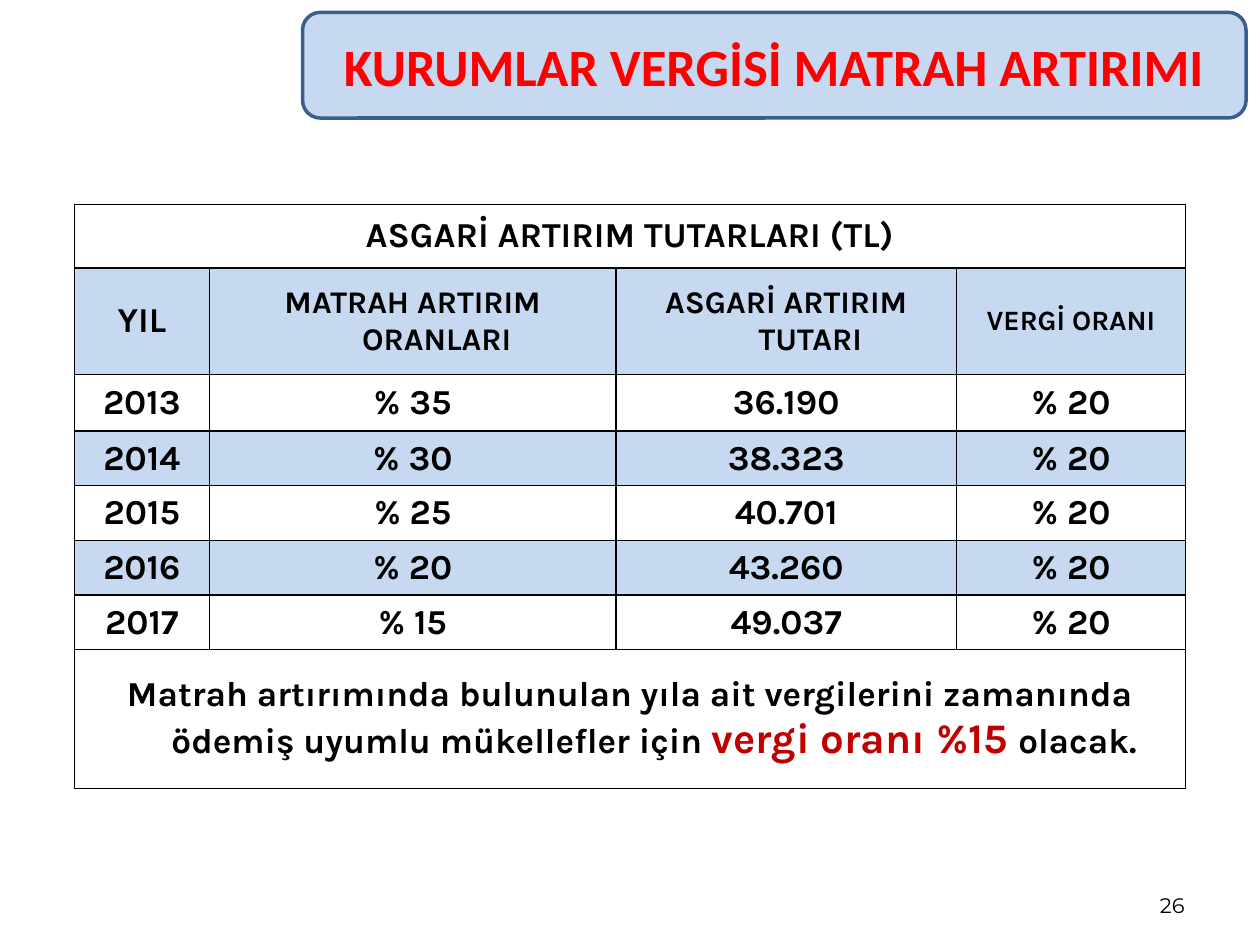
from lxml import etree
from pptx import Presentation
from pptx.dml.color import RGBColor
from pptx.enum.shapes import MSO_SHAPE
from pptx.enum.text import MSO_ANCHOR, PP_ALIGN
from pptx.oxml.ns import qn
from pptx.util import Cm, Pt

ROUND = MSO_SHAPE.ROUNDED_RECTANGLE
MID, LOW = MSO_ANCHOR.MIDDLE, MSO_ANCHOR.BOTTOM
MIDST, RIGHT = PP_ALIGN.CENTER, PP_ALIGN.RIGHT
HUES = {"blue": "C6D9F1", "edge": "3A5F8C", "red": "FF0000", "dark": "C00000", "black": "000000"}


def tint(name):
    """Return the named colour."""
    return RGBColor.from_string(HUES[name])


def write(para, text, font="Karla", size=20, hue="black", bold=True, align=MIDST):
    """Add a formatted run to a paragraph."""
    para.alignment = align
    run = para.add_run()
    run.text = text
    run.font.name = font
    run.font.size = Pt(size)
    run.font.bold = bold
    run.font.color.rgb = tint(hue)


class Deck:
    """Hold the style and the current slide."""

    def __init__(self):
        """Start a deck with one blank slide."""
        self.file = Presentation()
        self.file.slide_width, self.file.slide_height = Cm(25.4), Cm(19.05)
        self.slide = self.file.slides.add_slide(self.file.slide_layouts[6])
        self.hang = Cm(0.97)

    def panel(self, *spot):
        """Draw the rounded title panel."""
        shape = self.slide.shapes.add_shape(ROUND, *map(Cm, spot))
        shape.shadow.inherit = False
        shape.fill.solid()
        shape.fill.fore_color.rgb = tint("blue")
        shape.line.color.rgb = tint("edge")
        shape.line.width = Pt(2)

    def label(self, text, *spot, anchor=MID, **form):
        """Place a text box."""
        frame = self.slide.shapes.add_textbox(*map(Cm, spot)).text_frame
        frame.word_wrap = True
        frame.vertical_anchor = anchor
        write(frame.paragraphs[0], text, **form)

    def grid(self, left, top, cols, rows):
        """Add a plain bordered table."""
        spot = map(Cm, (left, top, sum(cols), sum(rows)))
        table = self.slide.shapes.add_table(len(rows), len(cols), *spot).table
        table.first_row = table.horz_banding = False
        for col, width in zip(table.columns, cols):
            col.width = Cm(width)
        for row, height in zip(table.rows, rows):
            row.height = Cm(height)
        for cell in table.iter_cells():
            self.border(cell)
            cell.fill.background()
        return table

    def border(self, cell):
        """Rule all four sides of a cell."""
        props = cell._tc.get_or_add_tcPr()
        for side in "LRTB":
            line = etree.SubElement(props, qn(f"a:ln{side}"), w=str(Pt(1)))
            fill = etree.SubElement(line, qn("a:solidFill"))
            etree.SubElement(fill, qn("a:srgbClr"), val=HUES["black"])

    def cell(self, cell, *runs, shade=False):
        """Fill a cell with text and form pairs."""
        if shade:
            cell.fill.solid()
            cell.fill.fore_color.rgb = tint("blue")
        cell.vertical_anchor = MID
        para = cell.text_frame.paragraphs[0]
        props = para._p.get_or_add_pPr()
        props.set("marL", str(self.hang))
        props.set("indent", str(-self.hang))
        for text, form in runs:
            write(para, text, **form)


def main():
    """Build the tax base slide."""
    deck = Deck()
    deck.panel(6.1, 0.25, 19.02, 2.13)
    deck.label("26", 18.21, 17.35, 5.92, 1.27, anchor=LOW,
               font="Montserrat", size=12, bold=False, align=RIGHT)
    deck.label("KURUMLAR VERGİSİ MATRAH ARTIRIMI", 6.5, 0.53, 18.21, 1.6,
               font="Calibri", size=30, hue="red")

    rows = [1.28, 2.15, 1.14] + [1.08] * 4 + [2.8]
    table = deck.grid(1.5, 4.12, [2.72, 8.2, 6.86, 4.62], rows)
    last = len(rows) - 1
    for row in (0, last):
        table.cell(row, 0).merge(table.cell(row, 3))
    deck.cell(table.cell(0, 0), ("ASGARİ ARTIRIM TUTARLARI (TL)", {}))

    heads = [("YIL", 20), ("MATRAH ARTIRIM ORANLARI", 18),
             ("ASGARİ ARTIRIM TUTARI", 18), ("VERGİ ORANI", 16)]
    for col, (text, size) in enumerate(heads):
        deck.cell(table.cell(1, col), (text, {"size": size}), shade=True)

    data = [("2013", "% 35", "36.190"), ("2014", "% 30", "38.323"), ("2015", "% 25", "40.701"),
            ("2016", "% 20", "43.260"), ("2017", "% 15", "49.037")]
    for row, items in enumerate(data, 2):
        for col, text in enumerate((*items, "% 20")):
            deck.cell(table.cell(row, col), (text, {}), shade=row % 2 == 1)

    deck.cell(table.cell(last, 0),
              ("Matrah artırımında bulunulan yıla ait vergilerini zamanında "
               "ödemiş uyumlu mükellefler için ", {}),
              ("vergi oranı %15 ", {"size": 24, "hue": "dark"}),
              ("olacak.", {}))
    deck.file.save("out.pptx")


if __name__ == "__main__":
    main()
